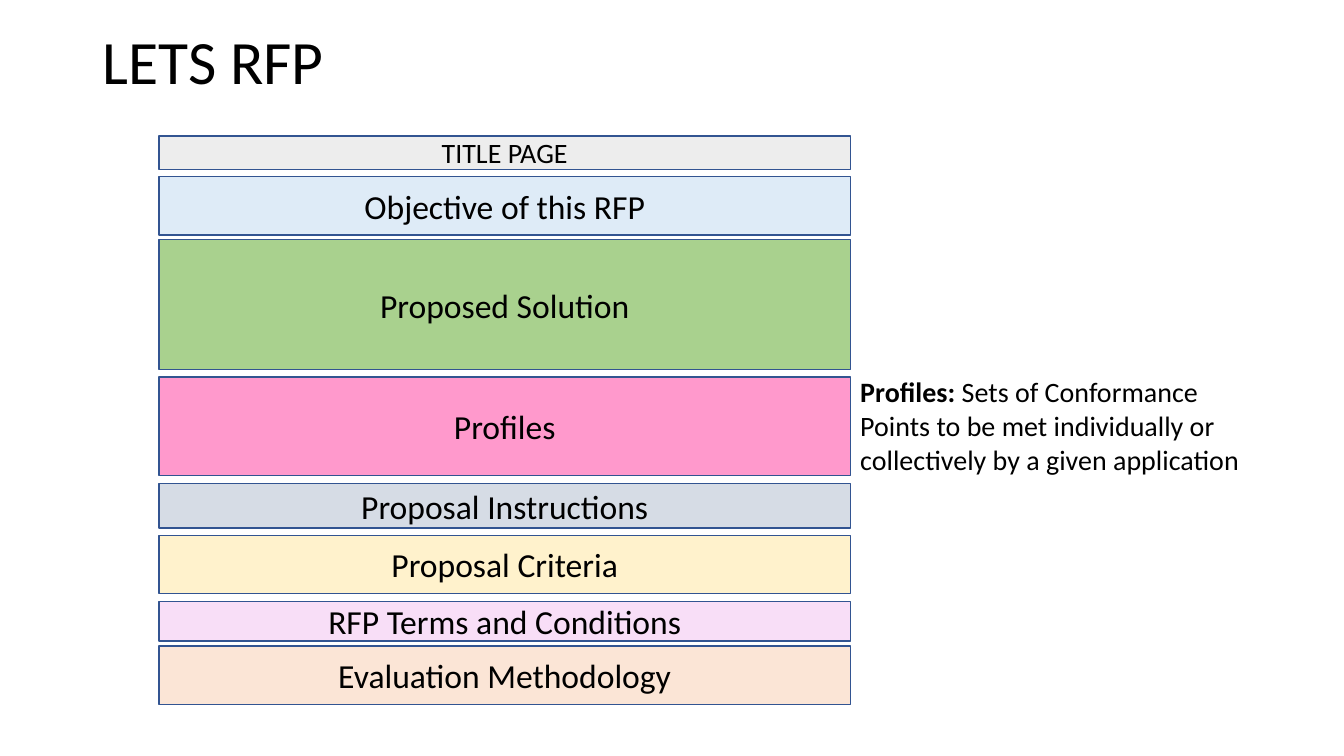
import pptx
import pptx.util
import pptx.dml.color
import pptx.enum.shapes
import pptx.enum.text

Cm, Pt = pptx.util.Cm, pptx.util.Pt
RGB = pptx.dml.color.RGBColor
ALIGN = pptx.enum.text.PP_ALIGN
MID = pptx.enum.text.MSO_ANCHOR.MIDDLE
TOP = pptx.enum.text.MSO_ANCHOR.TOP
RECT = pptx.enum.shapes.MSO_SHAPE.RECTANGLE

BLACK = RGB(0x00, 0x00, 0x00)
EDGE = RGB(0x32, 0x54, 0x91)
GREY = RGB(0xED, 0xED, 0xED)
BLUE = RGB(0xDE, 0xEB, 0xF7)
GREEN = RGB(0xA9, 0xD1, 0x8E)
PINK = RGB(0xFF, 0x99, 0xCC)
SLATE = RGB(0xD6, 0xDC, 0xE5)
YELLOW = RGB(0xFF, 0xF2, 0xCC)
LILAC = RGB(0xF8, 0xDE, 0xF7)
PEACH = RGB(0xFB, 0xE5, 0xD6)

TITLE = "LETS RFP"
NOTE = [("Profiles: ", True),
        ("Sets of Conformance Points to be met individually or "
         "collectively by a given application", False)]
# Section, top and height in cm, fill, text size
BANDS = [
    ("TITLE PAGE", 3.43, 0.84, GREY, 20),
    ("Objective of this RFP", 4.45, 1.47, BLUE, 24),
    ("Proposed Solution", 6.04, 3.28, GREEN, 24),
    ("Profiles", 9.5, 2.49, PINK, 24),
    ("Proposal Instructions", 12.19, 1.12, SLATE, 24),
    ("Proposal Criteria", 13.49, 1.47, YELLOW, 24),
    ("RFP Terms and Conditions", 15.16, 0.99, LILAC, 24),
    ("Evaluation Methodology", 16.28, 1.47, PEACH, 24),
]
LEFT, WIDTH = 4.01, 17.42


def write(shape, runs, size, anchor=MID, **para):
    """Fill the shape with one paragraph of (text, bold) runs."""
    frame = shape.text_frame
    frame.word_wrap = True
    frame.vertical_anchor = anchor
    line = frame.paragraphs[0]
    for key, val in para.items():
        setattr(line, key, val)
    for text, bold in runs:
        run = line.add_run()
        run.text = text
        look = {"name": "Calibri", "size": Pt(size), "bold": bold}
        for key, val in look.items():
            setattr(run.font, key, val)
        run.font.color.rgb = BLACK


def main():
    deck = pptx.Presentation()
    deck.slide_width, deck.slide_height = Cm(33.87), Cm(19.05)
    shapes = deck.slides.add_slide(deck.slide_layouts[6]).shapes

    title = shapes.add_textbox(Cm(2.33), Cm(0), Cm(29.21), Cm(3.25))
    write(title, [(TITLE, False)], 44, line_spacing=0.9)

    for name, top, height, fill, size in BANDS:
        band = shapes.add_shape(RECT, Cm(LEFT), Cm(top), Cm(WIDTH), Cm(height))
        band.shadow.inherit = False
        band.fill.solid()
        band.fill.fore_color.rgb = fill
        band.line.color.rgb = EDGE
        band.line.width = Pt(1)
        write(band, [(name, False)], size, alignment=ALIGN.CENTER)

    note = shapes.add_textbox(Cm(LEFT + WIDTH), Cm(9.32), Cm(10.31), Cm(2.82))
    write(note, NOTE, 20, TOP)

    deck.save("out.pptx")


if __name__ == "__main__":
    main()
